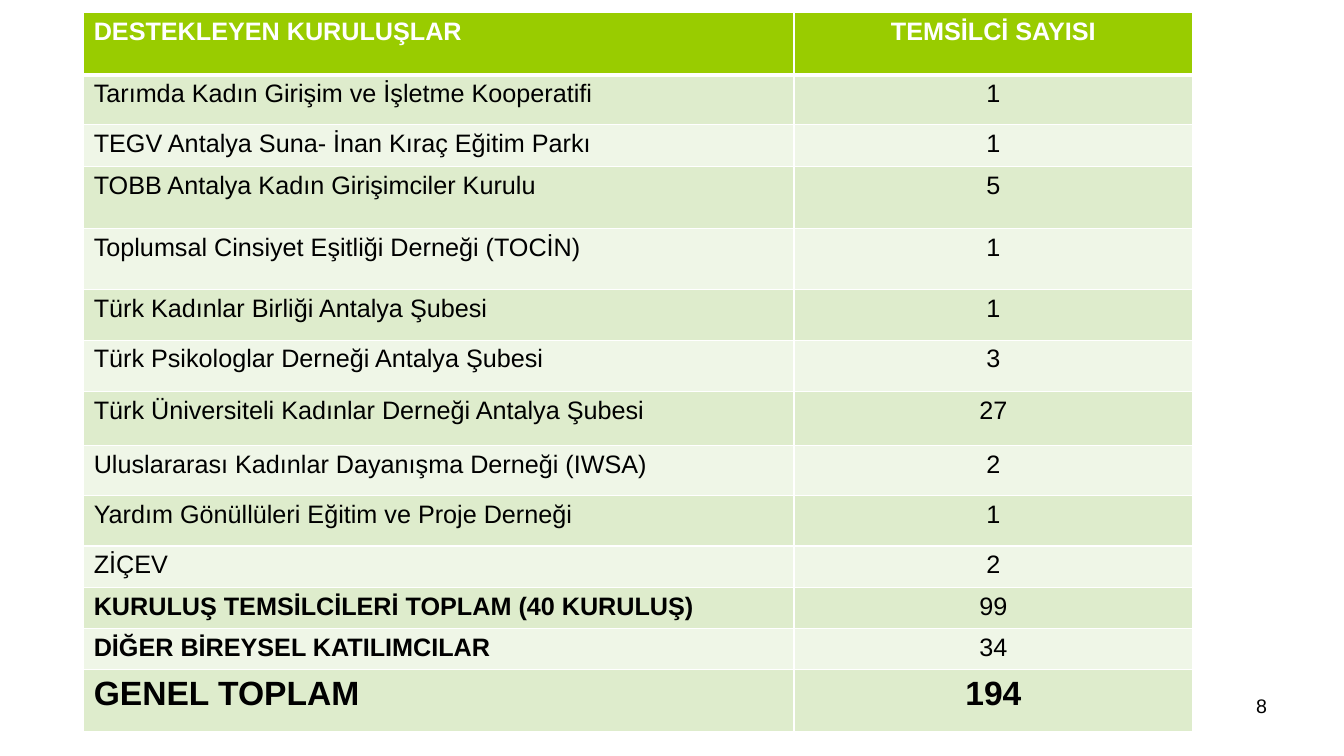
from dataclasses import dataclass
from lxml import etree
from pptx import Presentation
from pptx.dml.color import RGBColor
from pptx.enum import text
from pptx.oxml import ns
from pptx.util import Cm, Pt

HEAD = ("DESTEKLEYEN KURULUŞLAR", "TEMSİLCİ SAYISI", 1.57)
GROUPS = [
    ("Tarımda Kadın Girişim ve İşletme Kooperatifi", "1", 1.24),
    ("TEGV Antalya Suna- İnan Kıraç Eğitim Parkı", "1", 1.07),
    ("TOBB Antalya Kadın Girişimciler Kurulu", "5", 1.55),
    ("Toplumsal Cinsiyet Eşitliği Derneği (TOCİN)", "1", 1.55),
    ("Türk Kadınlar Birliği Antalya Şubesi", "1", 1.27),
    ("Türk Psikologlar Derneği Antalya Şubesi", "3", 1.3),
    ("Türk Üniversiteli Kadınlar Derneği Antalya Şubesi", "27", 1.35),
    ("Uluslararası Kadınlar Dayanışma Derneği (IWSA)", "2", 1.27),
    ("Yardım Gönüllüleri Eğitim ve Proje Derneği", "1", 1.27),
    ("ZİÇEV", "2", 1.04),
]
SUMS = [
    ("KURULUŞ TEMSİLCİLERİ TOPLAM (40 KURULUŞ)", "99", 1.04),
    ("DİĞER BİREYSEL KATILIMCILAR", "34", 1.04),
]
TOTAL = ("GENEL TOPLAM", "194", 1.55)
ROWS = [HEAD, *GROUPS, *SUMS, TOTAL]
WIDTHS = (17.9, 10.05)
PAGE = "8"


@dataclass(frozen=True)
class Theme:
    font: str = "Arial"
    ink: str = "000000"
    white: str = "FFFFFF"
    green: str = "99CC00"
    bands: tuple = ("DEECCC", "EFF6E7")
    body: int = 18
    total: int = 24
    page: int = 14
    thin: int = 1
    thick: int = 3


THEME = Theme()


def style(para, size, color, bold, align):
    para.alignment = align
    font = para.font
    font.name, font.size, font.bold = THEME.font, Pt(size), bold
    font.color.rgb = RGBColor.from_string(color)


def edge(cell, side, width):
    props = cell._tc.get_or_add_tcPr()
    line = etree.SubElement(props, ns.qn(f"a:ln{side}"), w=str(Pt(width)))
    fill = etree.SubElement(line, ns.qn("a:solidFill"))
    etree.SubElement(fill, ns.qn("a:srgbClr"), val=THEME.white)


def paint(cell, words, row, col):
    head, last = row == 0, row == len(ROWS) - 1
    label = col == 0
    for side in "LRTB":
        rule = (side, row) in (("B", 0), ("T", 1))
        edge(cell, side, THEME.thick if rule else THEME.thin)
    cell.fill.solid()
    shade = THEME.green if head else THEME.bands[(row - 1) % 2]
    cell.fill.fore_color.rgb = RGBColor.from_string(shade)
    cell.text = words
    style(
        cell.text_frame.paragraphs[0],
        THEME.total if last else THEME.body,
        THEME.white if head else THEME.ink,
        head or last or (label and row > len(GROUPS)),
        text.PP_ALIGN.LEFT if label else text.PP_ALIGN.CENTER,
    )


def add_grid(slide):
    high = sum(row[-1] for row in ROWS)
    frame = slide.shapes.add_table(
        len(ROWS), len(WIDTHS), Cm(2.11), Cm(0.32), Cm(sum(WIDTHS)), Cm(high))
    grid = frame.table
    for col, width in enumerate(WIDTHS):
        grid.columns[col].width = Cm(width)
    for row, (name, count, height) in enumerate(ROWS):
        grid.rows[row].height = Cm(height)
        for col, words in enumerate((name, count)):
            paint(grid.cell(row, col), words, row, col)


def add_page(slide):
    box = slide.shapes.add_textbox(Cm(24.28), Cm(17.35), Cm(7.9), Cm(1.32))
    frame = box.text_frame
    frame.word_wrap = True
    frame.text = PAGE
    style(frame.paragraphs[0], THEME.page, THEME.ink, False, text.PP_ALIGN.RIGHT)


def main():
    deck = Presentation()
    deck.slide_width, deck.slide_height = Cm(33.87), Cm(19.05)
    slide = deck.slides.add_slide(deck.slide_layouts[6])
    add_grid(slide)
    add_page(slide)
    deck.save("out.pptx")


if __name__ == "__main__":
    main()
